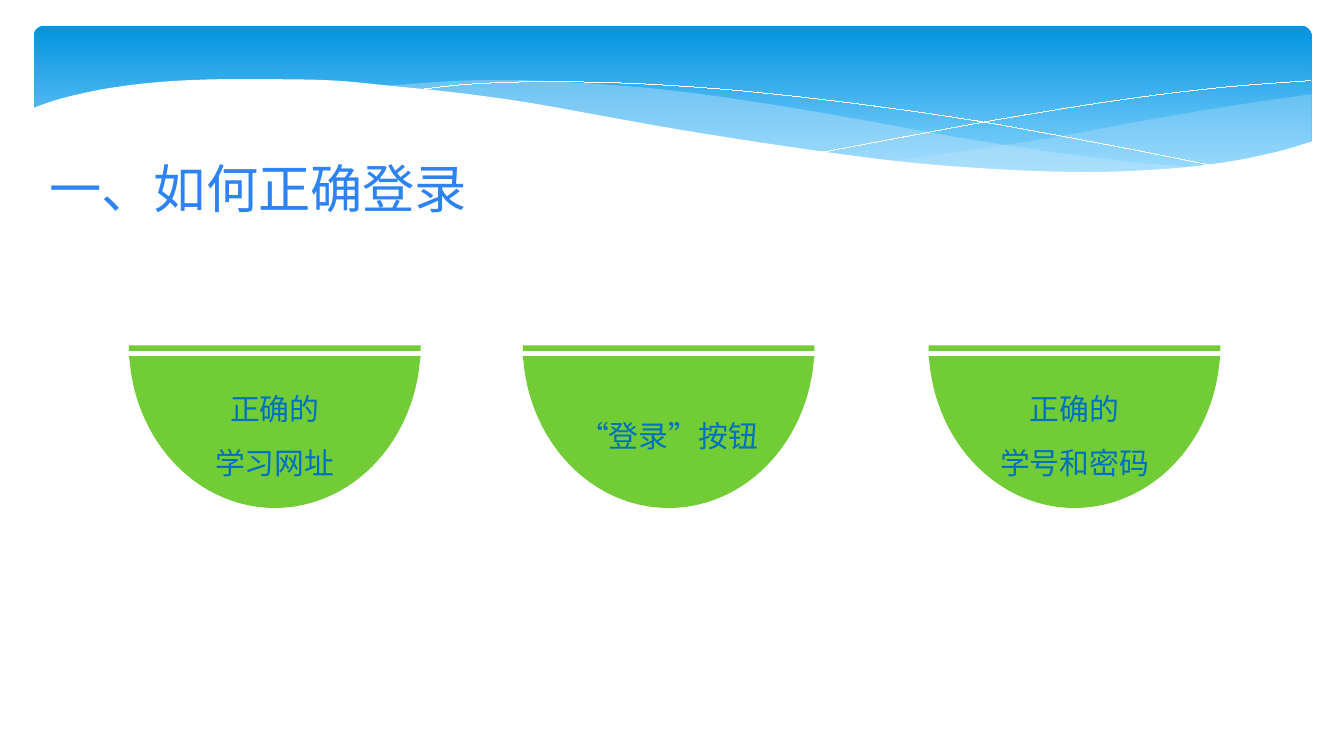
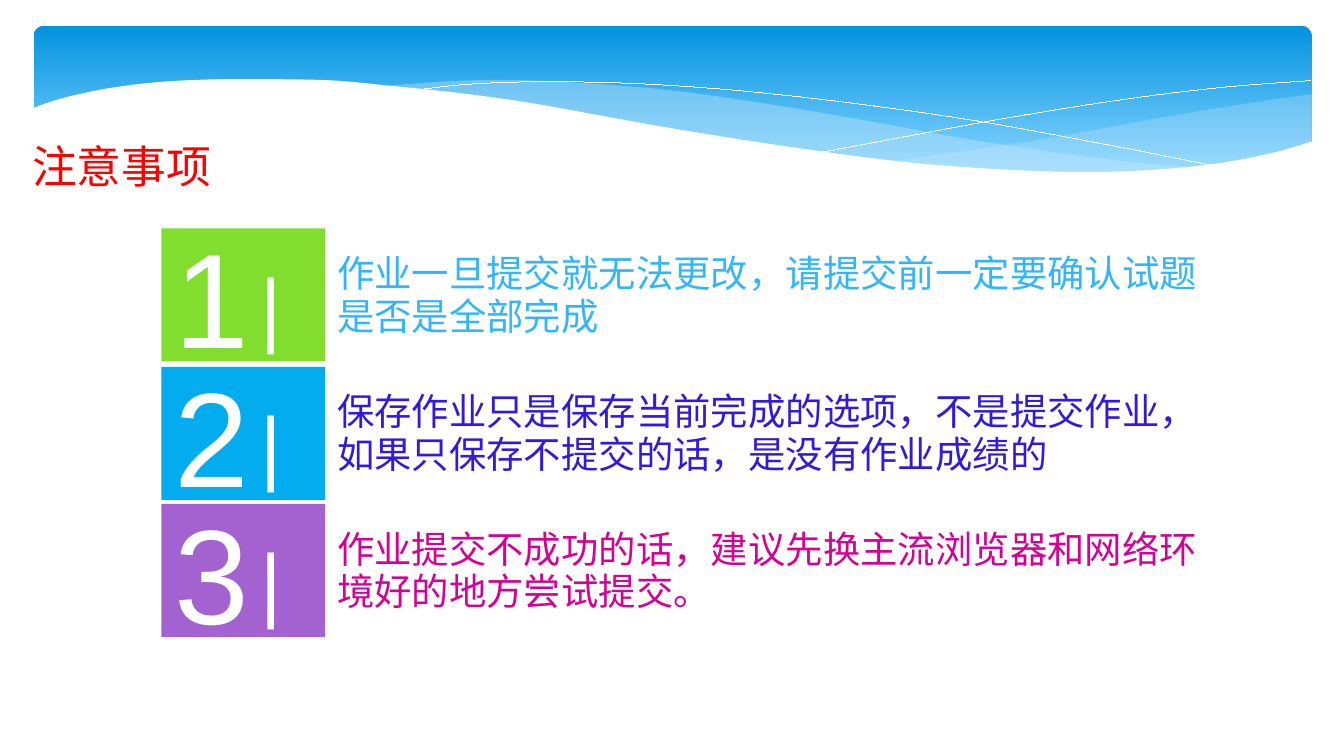
from math import cos, pi, sin

from lxml.etree import SubElement
from pptx import Presentation
from pptx.dml.color import RGBColor
from pptx.enum.lang import MSO_LANGUAGE_ID
from pptx.enum.shapes import MSO_SHAPE
from pptx.enum.text import MSO_ANCHOR, PP_ALIGN
from pptx.oxml.ns import qn
from pptx.util import Pt

PX = 9144
WIDTH = 1000

WHITE = RGBColor(0xFF, 0xFF, 0xFF)
NUMBER_WHITE = RGBColor(0xFE, 0xFF, 0xFF)
BAND_TOP = RGBColor(0x02, 0x93, 0xE0)
BAND_BOTTOM = RGBColor(0x83, 0xD3, 0xFE)
WAVE_BLUE = RGBColor(0xC6, 0xE7, 0xFC)
BOWL_GREEN = RGBColor(0x72, 0xCC, 0x36)
BOWL_TEXT = RGBColor(0x00, 0x70, 0xC0)
TITLE_BLUE = RGBColor(0x2D, 0x83, 0xF4)
TITLE_RED = RGBColor(0xFF, 0x00, 0x00)
LIME = RGBColor(0x82, 0xDE, 0x2E)
CYAN = RGBColor(0x02, 0xAC, 0xEE)
PURPLE = RGBColor(0xA3, 0x62, 0xD0)
SKY = RGBColor(0x31, 0xB6, 0xFD)
INDIGO = RGBColor(0x31, 0x1A, 0xDC)
MAGENTA = RGBColor(0xD6, 0x00, 0x93)

TITLE_FONT, BODY_FONT, CJK_FONT = "Cabin", "Arial", "Noto Sans CJK JP"

RIGHT_WAVE_TOP = [(976, 70), (921, 78), (861, 88), (779, 103), (706, 114), (661, 120)]
RIGHT_WAVE_BOTTOM = [(661, 120), (719, 125), (769, 128), (814, 129), (854, 128),
                     (897, 124), (942, 115), (976, 106)]
LONG_WAVE_TOP = [(893, 125), (837, 120), (775, 112), (706, 101), (629, 87), (569, 77),
                 (514, 69), (465, 64), (399, 60), (344, 60), (286, 64)]
LONG_WAVE_BOTTOM = [(286, 64), (342, 70), (404, 79), (449, 87), (530, 101), (601, 112),
                    (665, 121), (722, 126), (773, 129), (818, 130), (857, 128), (893, 125)]
FALLING_LINE = [(309, 67), (344, 63), (387, 61), (433, 61), (489, 63), (556, 68),
                (636, 77), (727, 90), (831, 109), (907, 124)]
RISING_LINE = [(613, 113), (672, 102), (748, 88), (836, 74), (910, 65), (975, 60)]
WHITE_WAVE = [(977, 105), (950, 113), (910, 121), (863, 126), (809, 128), (744, 126),
              (668, 120), (579, 108), (503, 96), (447, 86), (391, 76), (340, 69),
              (292, 64), (250, 60), (211, 59), (161, 59), (119, 61), (85, 65),
              (59, 70), (40, 75), (23, 81)]


def smooth(points, steps=6):
    ends = [points[0], *points, points[-1]]
    curve = [points[0]]
    for a, b, c, d in zip(ends, ends[1:], ends[2:], ends[3:]):
        for i in range(1, steps + 1):
            t = i / steps
            curve.append(tuple(
                0.5 * (2 * q + (r - p) * t + (2 * p - 5 * q + 4 * r - u) * t ** 2
                       + (3 * q - p - 3 * r + u) * t ** 3)
                for p, q, r, u in zip(a, b, c, d)))
    return curve


def outline(s, *contours, close=True):
    scaled = [[(x * PX, y * PX) for x, y in contour] for contour in contours]
    builder = s.shapes.build_freeform(*scaled[0][0])
    for i, contour in enumerate(scaled):
        if i:
            builder.move_to(*contour[0])
        builder.add_line_segments(contour[1:], close=close)
    sp = builder.convert_to_shape()
    sp.shadow.inherit = False
    return sp


def paint(sp, color, alpha=None):
    sp.fill.solid()
    sp.fill.fore_color.rgb = color
    sp.line.fill.background()
    if alpha:
        clr = sp.fill._xPr.find(qn("a:solidFill"))[0]
        SubElement(clr, qn("a:alpha")).set("val", str(alpha * 1000))


def add_preset(s, kind, x, y, w, h):
    sp = s.shapes.add_shape(kind, x * PX, y * PX, w * PX, h * PX)
    sp.shadow.inherit = False
    return sp


def add_textbox(s, x, y, w, h):
    return s.shapes.add_textbox(x * PX, y * PX, w * PX, h * PX)


def write(sp, text, *, size, color, font=BODY_FONT, align=PP_ALIGN.LEFT,
          anchor=MSO_ANCHOR.MIDDLE, spacing=None, indent=0):
    tf = sp.text_frame
    tf.word_wrap = True
    tf.vertical_anchor = anchor
    for i, line in enumerate(text.split("\n")):
        p = tf.add_paragraph() if i else tf.paragraphs[0]
        p.alignment = align
        p.line_spacing = spacing
        if indent:
            p._p.get_or_add_pPr().set("marL", str(indent * PX))
        r = p.add_run()
        r.text = line
        r.font.size = Pt(size)
        r.font.name = font
        r.font.color.rgb = color
        r.font.language_id = MSO_LANGUAGE_ID.SIMPLIFIED_CHINESE
        SubElement(r.font._element, qn("a:ea")).set("typeface", CJK_FONT)


def add_band(s):
    band = add_preset(s, MSO_SHAPE.ROUNDED_RECTANGLE, 25, 19, 951, 117)
    band.adjustments[0] = 0.07
    band.line.fill.background()
    band.fill.gradient()
    band.fill.gradient_angle = 270
    for stop, color, position in zip(band.fill.gradient_stops, (BAND_TOP, BAND_BOTTOM), (0, 0.9)):
        stop.color.rgb = color
        stop.position = position
    for top, bottom, alpha in ((RIGHT_WAVE_TOP, RIGHT_WAVE_BOTTOM, 29),
                               (LONG_WAVE_TOP, LONG_WAVE_BOTTOM, 40)):
        paint(outline(s, smooth(top) + smooth(bottom)), WAVE_BLUE, alpha)
    for points in (FALLING_LINE, RISING_LINE):
        sp = outline(s, smooth(points), close=False)
        sp.fill.background()
        sp.line.color.rgb = WHITE
        sp.line._get_or_add_ln().set("w", "0")
    paint(outline(s, smooth(WHITE_WAVE) + [(23, 168), (977, 168)]), WHITE)


def add_title(s, text, box, size, color):
    write(add_textbox(s, *box), text, size=size, color=color, font=TITLE_FONT)


def add_bowl(s, x, y, w, h, text):
    rx, gap, rim = w / 2, 8, 4
    angles = [pi * i / 60 for i in range(61)]
    arc = [(x + rx + rx * cos(a), y + h * sin(a)) for a in angles]
    bowl = [(x + w, y + gap), *[pt for pt in arc if pt[1] > y + gap], (x, y + gap)]
    lid = [(x, y), (x + w, y), (x + w, y + rim), (x, y + rim)]
    sp = outline(s, bowl, lid)
    paint(sp, BOWL_GREEN)
    write(sp, text, size=16, color=BOWL_TEXT, align=PP_ALIGN.CENTER, spacing=1.5)


def add_note(s, x, y, w, h, number, fill, text, color):
    tile = 122
    sp = add_preset(s, MSO_SHAPE.RECTANGLE, x, y, tile, h)
    paint(sp, fill)
    write(sp, number, size=72, color=NUMBER_WHITE)
    write(add_textbox(s, x + tile - 1, y, w - tile + 1, h), text, size=20, color=color,
          font=CJK_FONT, spacing=Pt(23))
    write(add_textbox(s, x + 14, y + 15, 85, 63), "|", size=44, color=NUMBER_WHITE,
          anchor=MSO_ANCHOR.TOP, indent=50)


def add_slide(prs):
    s = prs.slides.add_slide(prs.slide_layouts[6])
    add_band(s)
    return s


def build_login(prs):
    s = add_slide(prs)
    bowls = ((96, "正确的\n学习网址"), (389, "“登录”按钮"), (691, "正确的\n学号和密码"))
    for x, text in bowls:
        add_bowl(s, x, 257, 217, 121, text)
    add_title(s, "一、如何正确登录", (27, 85, 816, 109), 28, TITLE_BLUE)


def build_notes(prs):
    s = add_slide(prs)
    notes = (
        (LIME, "作业一旦提交就无法更改，请提交前一定要确认试题是否是全部完成", SKY),
        (CYAN, "保存作业只是保存当前完成的选项，不是提交作业，如果只保存不提交的话，是没有作业成绩的", INDIGO),
        (PURPLE, "作业提交不成功的话，建议先换主流浏览器和网络环境好的地方尝试提交。", MAGENTA),
    )
    for i, (fill, text, color) in enumerate(notes):
        add_note(s, 120, round(170 + 102.6 * i), 787, 99, str(i + 1), fill, text, color)
    add_title(s, "注意事项", (14, 96, 986, 55), 24, TITLE_RED)


def main():
    prs = Presentation()
    prs.slide_width = WIDTH * PX
    prs.slide_height = prs.slide_width * 9 // 16
    build_login(prs)
    build_notes(prs)
    prs.save("out.pptx")


if __name__ == "__main__":
    main()
